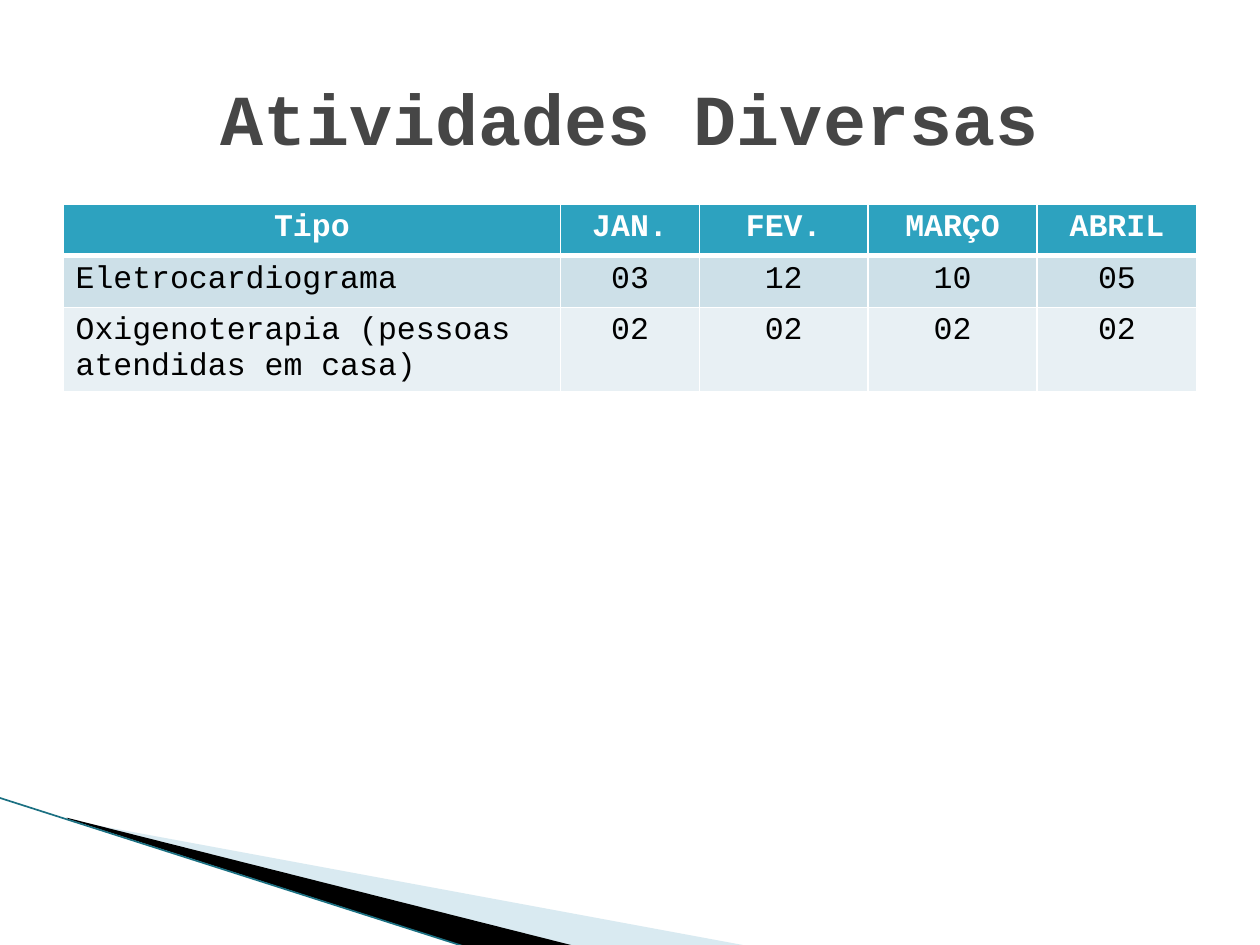
from lxml import etree
from pptx import Presentation
from pptx.dml.color import RGBColor
from pptx.enum.shapes import MSO_CONNECTOR
from pptx.enum.text import MSO_ANCHOR, PP_ALIGN
from pptx.oxml.ns import qn
from pptx.util import Inches, Pt

FONT = "Courier New"
COLUMN_WIDTHS = [3.95, 1.1, 1.34, 1.34, 1.27]
ROW_HEIGHT = 0.41
ROW_FILLS = ["2DA2BF", "CDE0E8", "E8F0F4"]
ACTIVITIES = [
    ["Tipo", "JAN.", "FEV.", "MARÇO", "ABRIL"],
    ["Eletrocardiograma", "03", "12", "10", "05"],
    ["Oxigenoterapia (pessoas atendidas em casa)", "02", "02", "02", "02"],
]


def color(value):
    return RGBColor.from_string(value)


def write(frame, text, size, fill, bold=False, align=PP_ALIGN.LEFT):
    para = frame.paragraphs[0]
    para.alignment = align
    span = para.add_run()
    span.text = text
    span.font.name = FONT
    span.font.size = Pt(size)
    span.font.bold = bold
    span.font.color.rgb = color(fill)


def add_wedge(page, points, fill, opacity=100):
    corners = [(Inches(x), Inches(y)) for x, y in points]
    builder = page.shapes.build_freeform(*corners[0])
    builder.add_line_segments(corners[1:], close=True)
    wedge = builder.convert_to_shape()
    wedge.shadow.inherit = False
    wedge.line.fill.background()
    wedge.fill.solid()
    wedge.fill.fore_color.rgb = color(fill)
    if opacity < 100:
        tint = wedge.fill._xPr.find(qn("a:solidFill"))[0]
        etree.SubElement(tint, qn("a:alpha"), val=str(opacity * 1000))


def add_line(page, start, end, fill, width):
    points = [Inches(value) for value in (*start, *end)]
    line = page.shapes.add_connector(MSO_CONNECTOR.STRAIGHT, *points)
    line.line.color.rgb = color(fill)
    line.line.width = Pt(width)
    etree.SubElement(line._element.spPr, qn("a:effectLst"))


def set_borders(cell, top, bottom):
    """Draw white cell edges; widths are in points."""
    props = cell._tc.get_or_add_tcPr()
    edges = {"a:lnL": 1, "a:lnR": 1, "a:lnT": top, "a:lnB": bottom}
    for place, (tag, width) in enumerate(edges.items()):
        edge = etree.Element(qn(tag), w=str(Pt(width)))
        solid = etree.SubElement(edge, qn("a:solidFill"))
        etree.SubElement(solid, qn("a:srgbClr"), val="FFFFFF")
        props.insert(place, edge)


def add_activity_table(page):
    table = page.shapes.add_table(
        len(ACTIVITIES), len(COLUMN_WIDTHS), Inches(0.5), Inches(1.62),
        Inches(sum(COLUMN_WIDTHS)), Inches(ROW_HEIGHT * len(ACTIVITIES))).table
    for column, width in zip(table.columns, COLUMN_WIDTHS):
        column.width = Inches(width)
    for i, values in enumerate(ACTIVITIES):
        table.rows[i].height = Inches(ROW_HEIGHT)
        header = i == 0
        for j, text in enumerate(values):
            cell = table.cell(i, j)
            cell.fill.solid()
            cell.fill.fore_color.rgb = color(ROW_FILLS[i])
            set_borders(cell, top=3 if i == 1 else 1, bottom=3 if header else 1)
            centered = header or j > 0
            write(cell.text_frame, text, 18, "FFFFFF" if header else "000000",
                  bold=header,
                  align=PP_ALIGN.CENTER if centered else PP_ALIGN.LEFT)


def add_title(page, text):
    box = page.shapes.add_textbox(Inches(0.5), Inches(0.3), Inches(9), Inches(1.25))
    frame = box.text_frame
    frame.word_wrap = True
    frame.vertical_anchor = MSO_ANCHOR.MIDDLE
    write(frame, text, 41, "464646", bold=True, align=PP_ALIGN.CENTER)


def main():
    deck = Presentation()
    deck.slide_width, deck.slide_height = Inches(10), Inches(7.5)
    page = deck.slides.add_slide(deck.slide_layouts[6])
    add_wedge(page, [(0.55, 6.51), (5.95, 7.51), (4.56, 7.51), (0.55, 6.5)],
              "A0CBDC", opacity=40)
    add_wedge(page, [(0.53, 6.49), (4.57, 7.51), (3.72, 7.52), (0.54, 6.5)], "000000")
    add_line(page, (-0.01, 6.33), (3.71, 7.52), "1B7082", 0.95)
    add_activity_table(page)
    add_title(page, "Atividades Diversas")
    deck.save("out.pptx")


if __name__ == "__main__":
    main()
